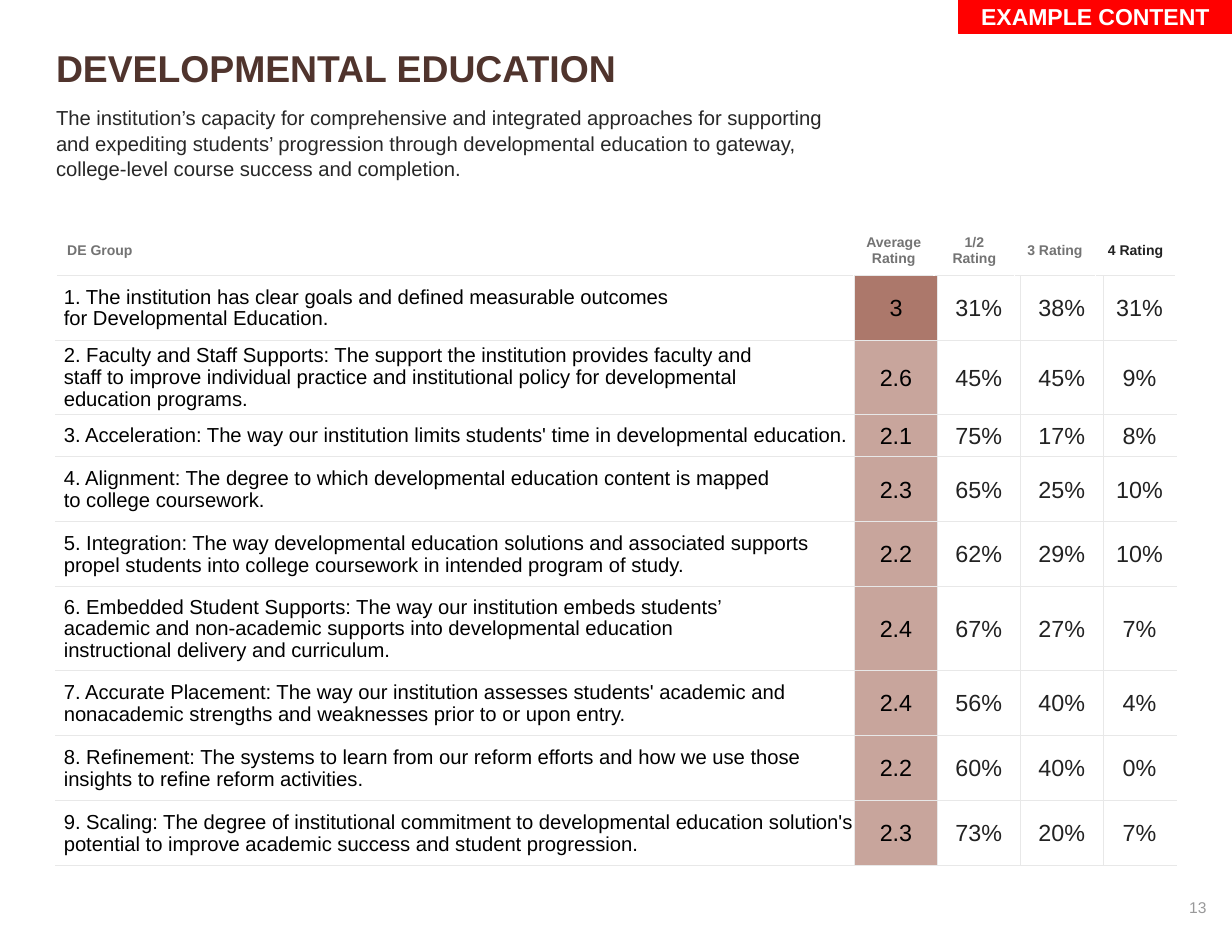
"""Build the Developmental Education ratings slide."""
from copy import deepcopy

from lxml import etree
from pptx import Presentation
from pptx import util as u
from pptx.dml.color import RGBColor
from pptx.enum import shapes, text
from pptx.oxml.ns import qn

BROWN = RGBColor(0x50, 0x34, 0x2D)
INK = RGBColor(0x27, 0x27, 0x27)
DARK = RGBColor(0x22, 0x22, 0x22)
BLACK = RGBColor(0x00, 0x00, 0x00)
WHITE = RGBColor(0xFF, 0xFF, 0xFF)
GREY = RGBColor(0x73, 0x73, 0x73)
PAGE_GREY = RGBColor(0x99, 0x99, 0x9A)
RULE = RGBColor(0xE8, 0xE8, 0xE8)
RED = RGBColor(0xFF, 0x00, 0x00)
HIGH = RGBColor(0xAC, 0x78, 0x6B)
LOW = RGBColor(0xC8, 0xA5, 0x9C)
LEFT, CENTER, RIGHT = text.PP_ALIGN.LEFT, text.PP_ALIGN.CENTER, text.PP_ALIGN.RIGHT
TOP, MIDDLE = text.MSO_ANCHOR.TOP, text.MSO_ANCHOR.MIDDLE


def write(frame, words, size, color, bold=False, align=LEFT, spacing=1.0, indent=0):
    """Fill a text frame with one formatted paragraph."""
    frame.word_wrap = True
    line = frame.paragraphs[0]
    line.text = words
    line.alignment = align
    line.line_spacing = spacing
    if indent:
        line._p.get_or_add_pPr().set("marL", str(u.Inches(indent)))
        line._p.get_or_add_pPr().set("indent", "0")
    for run in line.runs:
        run.font.name = "Arial"
        run.font.size = u.Pt(size)
        run.font.bold = bold
        run.font.color.rgb = color
    for line_break in line._p.findall(qn("a:br")):
        line_break.insert(0, deepcopy(line.runs[0]._r.rPr))


def style_cell(cell, fill, edges, margins):
    """Set the borders, fill and margins of a table cell."""
    properties = cell._tc.get_or_add_tcPr()
    for edge in edges:
        border = etree.SubElement(properties, qn(f"a:ln{edge}"), w=str(u.Pt(0.75)))
        paint = etree.SubElement(border, qn("a:solidFill"))
        etree.SubElement(paint, qn("a:srgbClr"), val=str(RULE))
    cell.fill.solid()
    cell.fill.fore_color.rgb = fill
    cell.vertical_anchor = MIDDLE
    cell.margin_left, cell.margin_top, cell.margin_right, cell.margin_bottom = map(u.Inches, margins)


deck = Presentation()
deck.slide_width, deck.slide_height = u.Inches(11), u.Inches(8.5)
slide = deck.slides.add_slide(deck.slide_layouts[5])

ratings = [
    ("1. The institution has clear goals and defined measurable outcomes\nfor Developmental Education.",
     "3", "31%", "38%", "31%"),
    ("2. Faculty and Staff Supports: The support the institution provides faculty and\n"
     "staff to improve individual practice and institutional policy for developmental\neducation programs.",
     "2.6", "45%", "45%", "9%"),
    ("3. Acceleration: The way our institution limits students' time in developmental education.",
     "2.1", "75%", "17%", "8%"),
    ("4. Alignment: The degree to which developmental education content is mapped\nto college coursework.",
     "2.3", "65%", "25%", "10%"),
    ("5. Integration: The way developmental education solutions and associated supports "
     "propel students into college coursework in intended program of study.",
     "2.2", "62%", "29%", "10%"),
    ("6. Embedded Student Supports: The way our institution embeds students’\n"
     "academic and non-academic supports into developmental education\ninstructional delivery and curriculum.",
     "2.4", "67%", "27%", "7%"),
    ("7. Accurate Placement: The way our institution assesses students' academic and "
     "nonacademic strengths and weaknesses prior to or upon entry.",
     "2.4", "56%", "40%", "4%"),
    ("8. Refinement: The systems to learn from our reform efforts and how we use those "
     "insights to refine reform activities.",
     "2.2", "60%", "40%", "0%"),
    ("9. Scaling: The degree of institutional commitment to developmental education solution's "
     "potential to improve academic success and student progression.",
     "2.3", "73%", "20%", "7%"),
]
row_heights = [0.58, 0.66, 0.38, 0.58, 0.58, 0.75, 0.58, 0.58, 0.58]
rating_grid = slide.shapes.add_table(
    len(ratings), 5, u.Inches(0.5), u.Inches(2.46), u.Inches(10), u.Inches(5.27)).table
rating_grid.first_row = rating_grid.horz_banding = False
for column, width in zip(rating_grid.columns, [7.13, 0.74, 0.74, 0.74, 0.65]):
    column.width = u.Inches(width)
for r, (values, height) in enumerate(zip(ratings, row_heights)):
    rating_grid.rows[r].height = u.Inches(height)
    for c, value in enumerate(values):
        cell = rating_grid.cell(r, c)
        edges = [edge for edge, drawn in zip("LRTB", (c > 0, c < 4, r > 0, True)) if drawn]
        fill = WHITE if c != 1 else HIGH if float(value) >= 3 else LOW
        style_cell(cell, fill, edges, (0.01, 0.01, 0.01, 0))
        if c == 0:
            write(cell.text_frame, value, 13, BLACK, spacing=0.96, indent=0.06)
        else:
            write(cell.text_frame, value, 15, BLACK if c == 1 else DARK, align=CENTER)

headings = ["DE Group", "Average Rating", "1/2 Rating", "3 Rating", "4 Rating"]
heading_row = slide.shapes.add_table(
    1, 5, u.Inches(0.5), u.Inches(2.01), u.Inches(10), u.Inches(0.45)).table
heading_row.first_row = heading_row.horz_banding = False
for c, heading in enumerate(headings):
    heading_row.columns[c].width = u.Inches(0.72 if c else 7.12)
    cell = heading_row.cell(0, c)
    style_cell(cell, WHITE, "B", (0.1, 0.05, 0.1, 0.05))
    write(cell.text_frame, heading, 9, DARK if c == 4 else GREY, bold=True,
          align=CENTER if c else LEFT)

page_number = slide.shapes.add_textbox(u.Inches(8.39), u.Inches(7.88), u.Inches(2.48), u.Inches(0.45))
page_number.text_frame.vertical_anchor = MIDDLE
write(page_number.text_frame, "13", 10, PAGE_GREY, align=RIGHT)

title = slide.shapes.title
title.left, title.top, title.width, title.height = map(u.Inches, (0.5, 0.45, 10, 0.38))
write(title.text_frame, "DEVELOPMENTAL EDUCATION", 24, BROWN, bold=True, spacing=0.9)

summary = slide.shapes.add_textbox(u.Inches(0.5), u.Inches(0.93), u.Inches(7.15), u.Inches(0.89))
write(summary.text_frame,
      "The institution’s capacity for comprehensive and integrated approaches for supporting "
      "and expediting students’ progression through developmental education to gateway, "
      "college-level course success and completion.", 13, INK, spacing=1.05)

for frame in (title.text_frame, summary.text_frame):
    frame.auto_size = text.MSO_AUTO_SIZE.NONE
    frame.vertical_anchor = TOP
    frame.margin_left = frame.margin_top = frame.margin_right = frame.margin_bottom = 0

example_tag = slide.shapes.add_shape(
    shapes.MSO_SHAPE.RECTANGLE, u.Inches(8.56), u.Inches(-0.01), u.Inches(2.44), u.Inches(0.31))
example_tag.shadow.inherit = False
example_tag.fill.solid()
example_tag.fill.fore_color.rgb = RED
example_tag.line.color.rgb = RED
example_tag.line.width = u.Pt(0.5)
example_tag.text_frame.vertical_anchor = MIDDLE
write(example_tag.text_frame, "EXAMPLE CONTENT", 14.8, WHITE, bold=True, align=CENTER)

deck.save("out.pptx")
